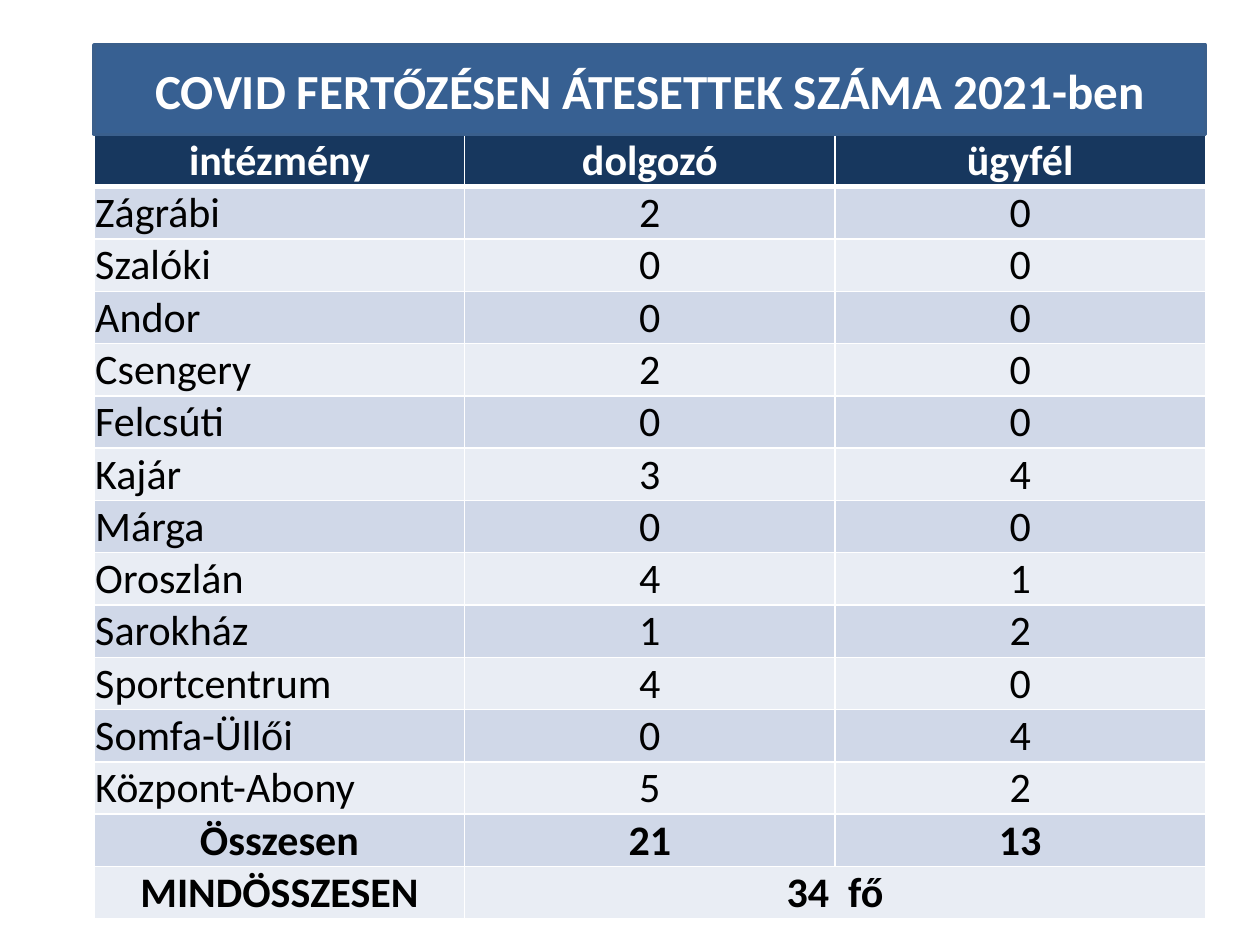
from lxml.etree import SubElement
from pptx import Presentation
from pptx.dml.color import RGBColor
from pptx.enum.text import MSO_ANCHOR as Anchor, PP_ALIGN as Align
from pptx.oxml.ns import qn
from pptx.util import Cm, Pt

WHITE = RGBColor(0xFF, 0xFF, 0xFF)
BLACK = RGBColor(0, 0, 0)
NAVY = RGBColor(0x17, 0x37, 0x5E)
BANNER_BLUE = RGBColor(0x37, 0x60, 0x92)
BANNER_EDGE = RGBColor(0x3A, 0x5F, 0x8C)
BANDS = (RGBColor(0xE9, 0xED, 0xF4), RGBColor(0xD0, 0xD8, 0xE8))

LEFT, WIDTH = Cm(1.9), Cm(22.4)
BANNER_TOP, BANNER_HEIGHT = Cm(0.91), Cm(1.8)
HEADER_HEIGHT, ROW_HEIGHT = Cm(0.99), Cm(0.86)

HEADINGS = ("intézmény", "dolgozó", "ügyfél")
CASES = (
    ("Zágrábi", 2, 0),
    ("Szalóki", 0, 0),
    ("Andor", 0, 0),
    ("Csengery", 2, 0),
    ("Felcsúti", 0, 0),
    ("Kajár", 3, 4),
    ("Márga", 0, 0),
    ("Oroszlán", 4, 1),
    ("Sarokház", 1, 2),
    ("Sportcentrum", 4, 0),
    ("Somfa-Üllői", 0, 4),
    ("Központ-Abony", 5, 2),
)
TOTALS = ("Összesen", 21, 13)
GRAND_TOTAL = ("MINDÖSSZESEN", "34  fő", "")


def write(frame, text, size, color, bold, align):
    paragraph = frame.paragraphs[0]
    paragraph.alignment = align
    run = paragraph.add_run()
    run.text = text
    run.font.name = "Calibri"
    run.font.size = Pt(size)
    run.font.bold = bold
    run.font.color.rgb = color


def add_borders(cell, bottom):
    """White cell edges; these must come before the fill."""
    properties = cell._tc.get_or_add_tcPr()
    for side, points in (("L", 1), ("R", 1), ("T", 1), ("B", bottom)):
        edge = SubElement(properties, qn(f"a:ln{side}"), w=str(Pt(points)))
        fill = SubElement(edge, qn("a:solidFill"))
        SubElement(fill, qn("a:srgbClr"), val=str(WHITE))


def format_cell(cell, fill, anchor, bottom):
    add_borders(cell, bottom)
    cell.fill.solid()
    cell.fill.fore_color.rgb = fill
    cell.vertical_anchor = anchor
    cell.margin_left = cell.margin_right = cell.margin_top = Cm(0.02)
    cell.margin_bottom = 0


def add_case_table(slide):
    rows = (HEADINGS, *CASES, TOTALS, GRAND_TOTAL)
    height = HEADER_HEIGHT + ROW_HEIGHT * (len(rows) - 1)
    table = slide.shapes.add_table(
        len(rows), len(HEADINGS), LEFT, BANNER_TOP + BANNER_HEIGHT, WIDTH, height
    ).table
    last = len(rows) - 1
    table.cell(last, 1).merge(table.cell(last, 2))

    for r, values in enumerate(rows):
        is_header = r == 0
        is_case = 0 < r <= len(CASES)
        table.rows[r].height = HEADER_HEIGHT if is_header else ROW_HEIGHT
        fill = NAVY if is_header else BANDS[r % 2]
        anchor = Anchor.BOTTOM if is_case else Anchor.MIDDLE
        for c, value in enumerate(values):
            cell = table.cell(r, c)
            format_cell(cell, fill, anchor, 3 if is_header else 1)
            if not cell.is_spanned:
                write(cell.text_frame, str(value), 24,
                      WHITE if is_header else BLACK, not is_case,
                      Align.LEFT if is_case and c == 0 else Align.CENTER)


def add_banner(slide):
    banner = slide.shapes.title
    banner.left, banner.top = LEFT, BANNER_TOP
    banner.width, banner.height = WIDTH, BANNER_HEIGHT
    banner.fill.solid()
    banner.fill.fore_color.rgb = BANNER_BLUE
    banner.line.color.rgb = BANNER_EDGE
    banner.line.width = Pt(2)
    banner.text_frame.vertical_anchor = Anchor.MIDDLE
    write(banner.text_frame, "COVID FERTŐZÉSEN ÁTESETTEK SZÁMA 2021-ben",
          28, WHITE, True, Align.CENTER)
    # Bring the banner in front of the table
    slide.shapes._spTree.append(banner._element)


def main():
    deck = Presentation()
    deck.slide_width, deck.slide_height = Cm(25.4), Cm(19.05)
    slide = deck.slides.add_slide(deck.slide_layouts[5])
    add_case_table(slide)
    add_banner(slide)
    deck.save("out.pptx")


if __name__ == "__main__":
    main()
